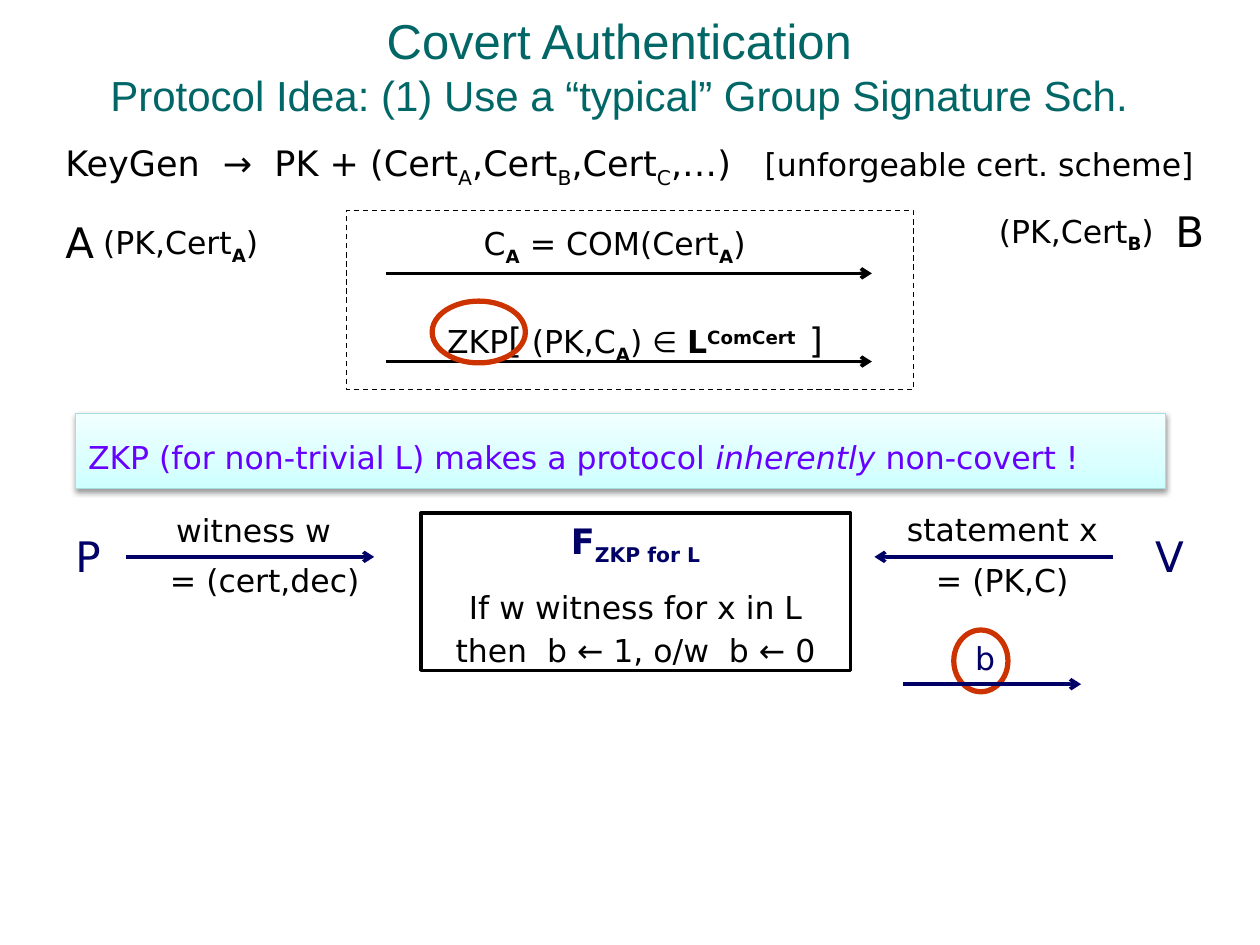
from copy import deepcopy
from dataclasses import dataclass

from lxml.etree import SubElement
from pptx import Presentation
from pptx.dml.color import RGBColor
from pptx.enum.dml import MSO_LINE
from pptx.enum.shapes import MSO_CONNECTOR, MSO_SHAPE
from pptx.enum.text import MSO_ANCHOR, MSO_AUTO_SIZE, PP_ALIGN
from pptx.oxml.ns import qn
from pptx.util import Inches, Pt


@dataclass(frozen=True)
class Theme:
    heading_font: str = "Arial"
    body_font: str = "DejaVu Sans"
    teal: str = "006666"
    black: str = "000000"
    white: str = "FFFFFF"
    navy: str = "000066"
    violet: str = "6600FF"
    red: str = "CC3300"
    banner_edge: str = "A8DEDE"
    banner_stops: tuple = ((0, "CDFFFF"), (0.35, "DBFFFF"), (1, "F1FFFF"))
    title: int = 28
    subtitle: int = 24
    party: int = 24
    formula: int = 20
    body: int = 18
    symbol: int = 28


THEME = Theme()


def write(para, text, font=THEME.body_font, size=THEME.body, colour=THEME.black,
          bold=False, italic=False, base=0):
    span = para.add_run()
    span.text = text
    span.font.name = font
    span.font.size = Pt(size)
    span.font.color.rgb = RGBColor.from_string(colour)
    span.font.bold = bold
    span.font.italic = italic
    if base:
        span.font._element.set("baseline", str(base * 1000))


def sub(text, bold=True):
    return text, dict(bold=bold, base=-25)


class SlideBuilder:
    def __init__(self, page, theme):
        self.page = page
        self.theme = theme

    def fill_paragraph(self, para, pieces, **style):
        for piece in pieces:
            text, changes = (piece, {}) if isinstance(piece, str) else piece
            write(para, text, **{**style, **changes})

    def title(self, bounds, heading, subheading):
        box = self.page.shapes.add_textbox(*map(Inches, bounds))
        frame = box.text_frame
        frame.word_wrap = True
        frame.vertical_anchor = MSO_ANCHOR.BOTTOM
        para = frame.paragraphs[0]
        para.alignment = PP_ALIGN.CENTER
        style = dict(font=self.theme.heading_font, colour=self.theme.teal)
        write(para, heading, size=self.theme.title, **style)
        para.add_line_break()
        write(para, subheading, size=self.theme.subtitle, **style)

    def label(self, bounds, *pieces, **style):
        box = self.page.shapes.add_textbox(*map(Inches, bounds))
        frame = box.text_frame
        frame.word_wrap = False
        frame.auto_size = MSO_AUTO_SIZE.SHAPE_TO_FIT_TEXT
        self.fill_paragraph(frame.paragraphs[0], pieces, **style)

    def tabbed_line(self, bounds, stops, *pieces, **style):
        box = self.page.shapes.add_textbox(*map(Inches, bounds))
        box.text_frame.word_wrap = True
        para = box.text_frame.paragraphs[0]
        tabs = SubElement(para._p.get_or_add_pPr(), qn("a:tabLst"))
        for stop in stops:
            SubElement(tabs, qn("a:tab"), pos=str(Inches(stop)), algn="l")
        para.line_spacing = 1.2
        self.fill_paragraph(para, pieces, **style)

    def outline(self, kind, bounds, colour, width, fill=None, dash=None):
        shape = self.page.shapes.add_shape(kind, *map(Inches, bounds))
        shape.shadow.inherit = False
        if fill:
            shape.fill.solid()
            shape.fill.fore_color.rgb = RGBColor.from_string(fill)
        else:
            shape.fill.background()
        shape.line.color.rgb = RGBColor.from_string(colour)
        shape.line.width = Pt(width)
        if dash:
            shape.line.dash_style = dash
        return shape

    def ring(self, bounds):
        self.outline(MSO_SHAPE.OVAL, bounds, self.theme.red, 3)

    def arrow(self, start, end, y, colour):
        line = self.page.shapes.add_connector(
            MSO_CONNECTOR.STRAIGHT, Inches(start), Inches(y), Inches(end), Inches(y))
        line.line.color.rgb = RGBColor.from_string(colour)
        line.line.width = Pt(2)
        SubElement(line.line._get_or_add_ln(), qn("a:tailEnd"), type="arrow")
        SubElement(line._element.spPr, qn("a:effectLst"))

    def function_box(self, bounds, paragraphs):
        shape = self.outline(MSO_SHAPE.RECTANGLE, bounds, self.theme.black, 2,
                             fill=self.theme.white)
        frame = shape.text_frame
        frame.word_wrap = True
        frame.vertical_anchor = MSO_ANCHOR.TOP
        for index, (pieces, gap, style) in enumerate(paragraphs):
            para = frame.add_paragraph() if index else frame.paragraphs[0]
            para.alignment = PP_ALIGN.CENTER
            para.space_after = Pt(gap)
            self.fill_paragraph(para, pieces, **style)

    def banner(self, bounds, *pieces, **style):
        shape = self.outline(MSO_SHAPE.RECTANGLE, bounds, self.theme.banner_edge, 0.75)
        shape.fill.gradient()
        shape.fill.gradient_angle = 90
        first = shape.fill.gradient_stops[0]._gs
        first.addnext(deepcopy(first))
        for stop, (position, colour) in zip(shape.fill.gradient_stops,
                                            self.theme.banner_stops):
            stop.position = position
            stop.color.rgb = RGBColor.from_string(colour)
        effects = shape._element.spPr.find(qn("a:effectLst"))
        shadow = SubElement(effects, qn("a:outerShdw"), blurRad=str(Pt(3.1)),
                            dist=str(Pt(1.6)), dir="5400000", rotWithShape="0")
        tint = SubElement(shadow, qn("a:srgbClr"), val=self.theme.black)
        SubElement(tint, qn("a:alpha"), val="38000")
        frame = shape.text_frame
        frame.word_wrap = True
        frame.vertical_anchor = MSO_ANCHOR.TOP
        para = frame.paragraphs[0]
        para.alignment = PP_ALIGN.LEFT
        para.line_spacing = 1.5
        self.fill_paragraph(para, pieces, **style)


def build_authentication(slide, theme):
    slide.title((0.5, 0.17, 8.83, 0.83), "Covert Authentication",
                "Protocol Idea: (1) Use a “typical” Group Signature Sch.")
    slide.label((0.42, 1.67, 0.43, 0.51), "A", size=theme.party)
    slide.label((9.23, 1.58, 0.43, 0.51), "B", size=theme.party)
    slide.label((3.74, 1.73, 2.38, 0.4), "C", sub("A"), " = COM(Cert", sub("A"), ")")
    slide.label((7.83, 1.63, 1.5, 0.4), "(PK,Cert", sub("B"), ")")
    slide.label((0.72, 1.72, 1.51, 0.4), "(PK,Cert", sub("A"), ")")
    bracket = dict(size=theme.formula)
    slide.label((3.45, 2.37, 3.56, 0.5), "ZKP", ("[", bracket), " (PK,C", sub("A"), ") ",
                ("∈", dict(size=theme.symbol, base=2)), " ", ("L", dict(bold=True)),
                ("ComCert", dict(bold=True, base=30)),
                (" ", dict(size=theme.party)), ("]", bracket))
    for y in (2.17, 2.87):
        slide.arrow(3.06, 6.92, y, theme.black)
    slide.outline(MSO_SHAPE.RECTANGLE, (2.75, 1.67, 4.5, 1.42), theme.black, 0.75,
                  dash=MSO_LINE.DASH)
    slide.tabbed_line((0.42, 1, 9.42, 0.67), (1.25, 1.66, 5.55),
                      "KeyGen\t→\tPK + (Cert", sub("A", False), ",Cert", sub("B", False),
                      ",Cert", sub("C", False), ",…)\t",
                      ("[unforgeable cert. scheme]", dict(size=theme.body)),
                      size=theme.formula)
    slide.ring((3.43, 2.39, 0.74, 0.49))


def build_proof(slide, theme):
    slide.banner((0.6, 3.28, 8.65, 0.6), "ZKP (for non-trivial L) makes a protocol ",
                 ("inherently", dict(italic=True)), " non-covert !", colour=theme.violet)
    slide.function_box((3.34, 4.07, 3.41, 1.25), (
        (("F", sub("ZKP for L")), 12,
         dict(size=theme.formula, colour=theme.navy, bold=True)),
        (("If w witness for x in L",), 3, {}),
        (("then  b ← 1, o/w  b ← 0",), 3, {}),
    ))
    for left, party in ((0.5, "P"), (9.07, "V")):
        slide.label((left, 4.16, 0.43, 0.51), party, size=theme.party, colour=theme.navy)
    for bounds, text in (
        ((1.3, 4.01, 1.45, 0.4), "witness w"),
        ((7.1, 4, 1.73, 0.4), "statement x"),
        ((1.25, 4.4, 1.75, 0.4), "= (cert,dec)"),
        ((7.33, 4.4, 1.32, 0.4), "= (PK,C)"),
    ):
        slide.label(bounds, text)
    slide.label((7.64, 5.02, 0.36, 0.4), "b", colour=theme.navy)
    slide.ring((7.57, 5, 0.43, 0.49))
    for start, end, y in ((1, 2.97, 4.42), (8.83, 6.94, 4.42), (7.17, 8.58, 5.43)):
        slide.arrow(start, end, y, theme.navy)


def main():
    deck = Presentation()
    deck.slide_width = Inches(10)
    deck.slide_height = Inches(7.5)
    slide = SlideBuilder(deck.slides.add_slide(deck.slide_layouts[6]), THEME)
    build_authentication(slide, THEME)
    build_proof(slide, THEME)
    deck.save("out.pptx")


if __name__ == "__main__":
    main()
